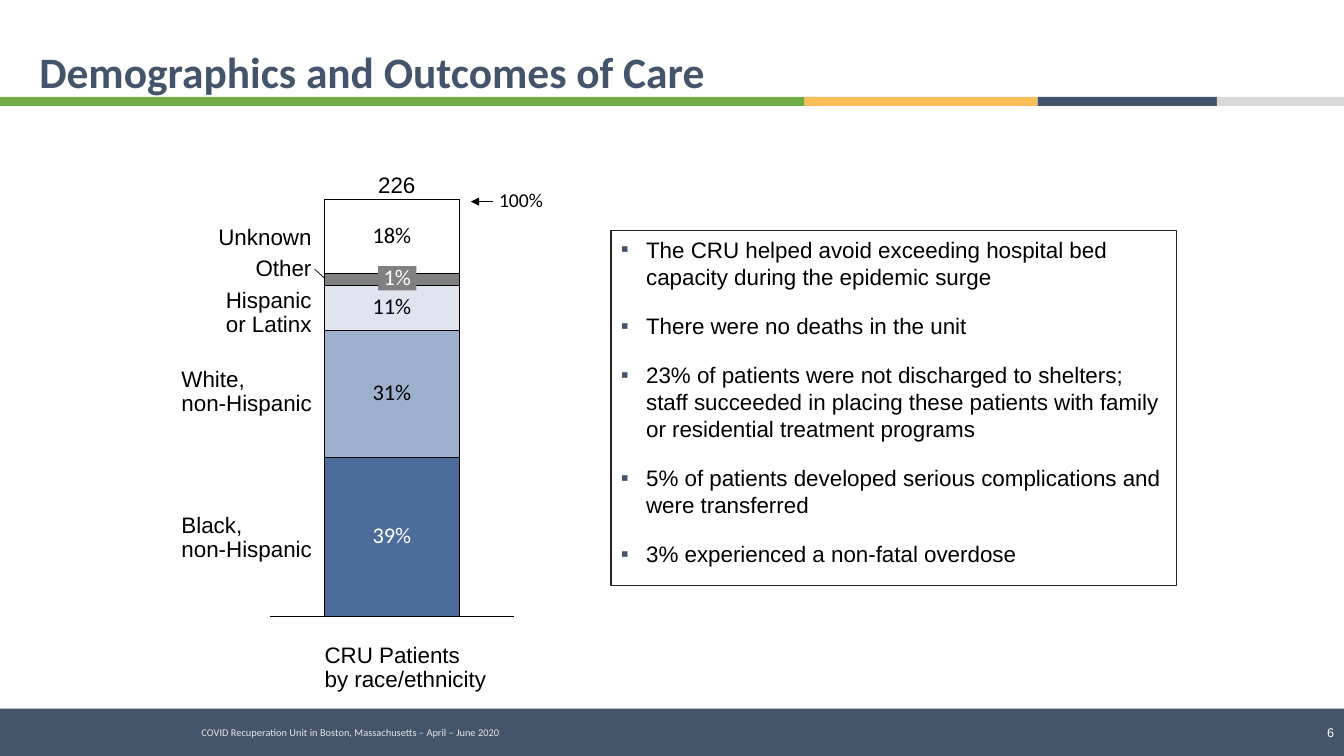
from dataclasses import dataclass
from lxml.etree import SubElement
from pptx import Presentation
from pptx.chart.data import CategoryChartData as ChartData
from pptx.dml.color import RGBColor as RGB
from pptx.enum.chart import XL_CHART_TYPE as Kind, XL_LABEL_POSITION as Spot
from pptx.enum.chart import XL_TICK_LABEL_POSITION as Tags, XL_TICK_MARK as Tick
from pptx.enum.shapes import MSO_CONNECTOR as Link, MSO_SHAPE as Form
from pptx.enum.text import MSO_ANCHOR as Anchor, MSO_AUTO_SIZE as Fit, PP_ALIGN as Align
from pptx.oxml import parse_xml
from pptx.oxml.ns import nsdecls, qn
from pptx.util import Inches, Pt

HUES = {
    "navy": "44546A", "green": "70AD47", "gold": "F8BF56", "pale": "D9D9D9",
    "cream": "E7E6E6", "white": "FFFFFF", "black": "000000", "gray": "808080",
    "edge": "262626", "deep": "4C6C9C", "mid": "9DB1CF", "light": "DFE5EF",
}


@dataclass
class Label:
    text: str
    box: tuple
    size: float = 16
    face: str = "Arial"
    hue: str = "black"
    align: Align = Align.RIGHT
    anchor: Anchor = Anchor.MIDDLE
    fill: str = ""
    wrap: bool = False
    pad: float = 0


@dataclass
class Part:
    name: str
    value: float
    fill: str
    ink: str = "black"


LABELS = [
    Label("Black,\nnon-Hispanic", (1.8, 5.1, 1.4, 0.48), align=Align.LEFT),
    Label("White,\nnon-Hispanic", (1.8, 3.65, 1.4, 0.48), align=Align.LEFT),
    Label("Hispanic\nor Latinx", (2.14, 2.87, 0.95, 0.48)),
    Label("Other", (2.43, 2.55, 0.66, 0.24)),
    Label("Unknown", (2.07, 2.24, 1.02, 0.24)),
    Label("100%", (4.95, 1.89, 0.5, 0.21), 14, "Calibri", align=Align.LEFT),
    Label("CRU Patients\nby race/ethnicity", (3.22, 6.39, 1.7, 0.48),
          align=Align.LEFT, anchor=Anchor.TOP),
    Label("1%", (3.75, 2.64, 0.38, 0.24), face="Calibri", hue="white",
          align=Align.CENTER, fill="gray", pad=0.03),
    Label("226", (3.72, 1.73, 0.43, 0.24), align=Align.CENTER,
          anchor=Anchor.BOTTOM, pad=0.03),
    Label("COVID Recuperation Unit in Boston, Massachusetts – April – June 2020",
          (1.9, 7.12, 7.73, 0.21), 7.4, "Calibri", "cream", Align.LEFT,
          Anchor.BOTTOM, wrap=True, pad=0.1),
    Label("6", (12.41, 7.15, 0.92, 0.25), 9, hue="white", wrap=True, pad=0.1),
]

PARTS = [
    Part("Series 1", 39, "deep", "white"),
    Part("Series 2", 31, "mid"),
    Part("Series 3", 11, "light"),
    Part("Series 4", 3, "gray", ""),
    Part("Series 5", 18, "white"),
]

POINTS = [
    "The CRU helped avoid exceeding hospital bed capacity during the epidemic surge",
    "There were no deaths in the unit",
    "23% of patients were not discharged to shelters; staff succeeded in placing "
    "these patients with family or residential treatment programs",
    "5% of patients developed serious complications and were transferred",
    "3% experienced a non-fatal overdose",
]


def tint(name: str) -> RGB:
    return RGB.from_string(HUES[name])


def place(box: tuple) -> list:
    return [Inches(side) for side in box]


def apply(item, style: dict) -> None:
    for key, value in style.items():
        setattr(item, key, value)


def ink(font, face: str, size: float, hue: str, bold: bool = False) -> None:
    apply(font, {"name": face, "size": Pt(size), "bold": bold})
    font.color.rgb = tint(hue)


def stroke(line, hue: str, width: float) -> None:
    line.color.rgb = tint(hue)
    line.width = Pt(width)


def add_rect(slide, box: tuple, fill: str = ""):
    rect = slide.shapes.add_shape(Form.RECTANGLE, *place(box))
    rect.shadow.inherit = False
    rect.line.fill.background()
    if fill:
        rect.fill.solid()
        rect.fill.fore_color.rgb = tint(fill)
    else:
        rect.fill.background()
    return rect


def add_label(slide, label: Label) -> None:
    if label.fill:
        shape = add_rect(slide, label.box, label.fill)
    else:
        shape = slide.shapes.add_textbox(*place(label.box))
    frame = shape.text_frame
    side = Inches(label.pad)
    apply(frame, {"word_wrap": label.wrap, "vertical_anchor": label.anchor,
                  "margin_left": side, "margin_right": side,
                  "margin_top": 0, "margin_bottom": 0})
    para = frame.paragraphs[0]
    para.text = label.text
    apply(para, {"alignment": label.align, "line_spacing": 0.9})
    for run in para.runs:
        ink(run.font, label.face, label.size, label.hue)


def add_line(slide, start: tuple, end: tuple, width: float, arrow: bool = False) -> None:
    line = slide.shapes.add_connector(Link.STRAIGHT, *place(start + end))
    stroke(line.line, "black", width)
    if arrow:
        SubElement(line.line._get_or_add_ln(), qn("a:tailEnd"), type="triangle")
    SubElement(line._element.spPr, qn("a:effectLst"))


def add_stack(slide, box: tuple) -> None:
    data = ChartData()
    data.categories = ["1"]
    for part in PARTS:
        data.add_series(part.name, [part.value])
    chart = slide.shapes.add_chart(Kind.COLUMN_STACKED, *place(box), data).chart
    apply(chart, {"has_legend": False, "has_title": False})
    ink(chart.font, "Calibri", 10, "black")
    plot = chart.plots[0]
    apply(plot, {"gap_width": 80, "overlap": 100, "vary_by_categories": False})
    total = sum(part.value for part in PARTS)
    apply(chart.value_axis, {"visible": False, "has_major_gridlines": False,
                             "minimum_scale": 0, "maximum_scale": total})
    axis = chart.category_axis
    apply(axis, {"tick_label_position": Tags.NONE, "major_tick_mark": Tick.NONE,
                 "minor_tick_mark": Tick.NONE})
    stroke(axis.format.line, "black", 0.75)

    # Segments and their labels
    for part, series in zip(PARTS, plot.series):
        series.format.fill.solid()
        series.format.fill.fore_color.rgb = tint(part.fill)
        stroke(series.format.line, "black", 0.25)
        if part.ink:
            tags = series.data_labels
            apply(tags, {"show_value": True, "number_format": '0"%"',
                         "number_format_is_linked": False, "position": Spot.CENTER})
            ink(tags.font, "Calibri", 16, part.ink)

    # Fixed inner plot area
    area = chart._chartSpace.chart.plotArea
    for old in area.findall(qn("c:layout")):
        area.remove(old)
    sides = {"x": 0.1, "y": 0.02, "w": 0.8, "h": 0.96}
    marks = "".join(f'<c:{key}Mode val="edge"/>' for key in "xy")
    marks += "".join(f'<c:{key} val="{value}"/>' for key, value in sides.items())
    area.insert(0, parse_xml(
        f'<c:layout {nsdecls("c")}><c:manualLayout><c:layoutTarget val="inner"/>'
        f'{marks}</c:manualLayout></c:layout>'))


def add_points(slide, box: tuple) -> None:
    panel = add_rect(slide, box)
    stroke(panel.line, "edge", 0.75)
    frame = panel.text_frame
    apply(frame, {"word_wrap": True, "vertical_anchor": Anchor.TOP})
    for index, text in enumerate(POINTS):
        para = frame.add_paragraph() if index else frame.paragraphs[0]
        para.text = text
        apply(para, {"alignment": Align.LEFT, "space_after": Pt(6),
                     "space_before": Pt(10 if index else 0)})
        props = para._p.get_or_add_pPr()
        props.set("marL", str(Inches(0.25)))
        props.set("indent", str(-Inches(0.25)))
        color = SubElement(props, qn("a:buClr"))
        SubElement(color, qn("a:srgbClr"), val=HUES["navy"])
        SubElement(props, qn("a:buFont"), typeface="Arial")
        SubElement(props, qn("a:buChar"), char="▪")
        ink(para.runs[0].font, "Arial", 16, "black")


def main() -> None:
    deck = Presentation()
    apply(deck, {"slide_width": Inches(13.33), "slide_height": Inches(7.5)})
    slide = deck.slides.add_slide(deck.slide_layouts[5])

    # Footer band and colour strip
    add_rect(slide, (0, 7.03, 13.33, 0.47), "navy")
    edges = [0, 7.98, 10.29, 12.07, 13.33]
    for left, right, hue in zip(edges, edges[1:], ["green", "gold", "navy", "pale"]):
        add_rect(slide, (left, 0.96, right - left, 0.09), hue)

    # Title
    title = slide.shapes.title
    apply(title, dict(zip(["left", "top", "width", "height"],
                          place((0.29, 0.39, 12.76, 0.69)))))
    apply(title.text_frame, {"text": "Demographics and Outcomes of Care",
                             "vertical_anchor": Anchor.MIDDLE,
                             "auto_size": Fit.NONE, "word_wrap": True})
    head = title.text_frame.paragraphs[0]
    apply(head, {"alignment": Align.LEFT, "line_spacing": 0.9})
    ink(head.runs[0].font, "Calibri", 31, "navy", True)

    # Stacked column with its labels, leader and arrow
    add_stack(slide, (2.37, 1.89, 3.03, 4.31))
    add_line(slide, (3.12, 2.67), (3.22, 2.76), 0.5)
    add_line(slide, (4.89, 2), (4.67, 2), 0.75, arrow=True)
    for label in LABELS:
        add_label(slide, label)

    # Findings
    add_points(slide, (6.06, 2.29, 5.61, 3.52))
    deck.save("out.pptx")


if __name__ == "__main__":
    main()
